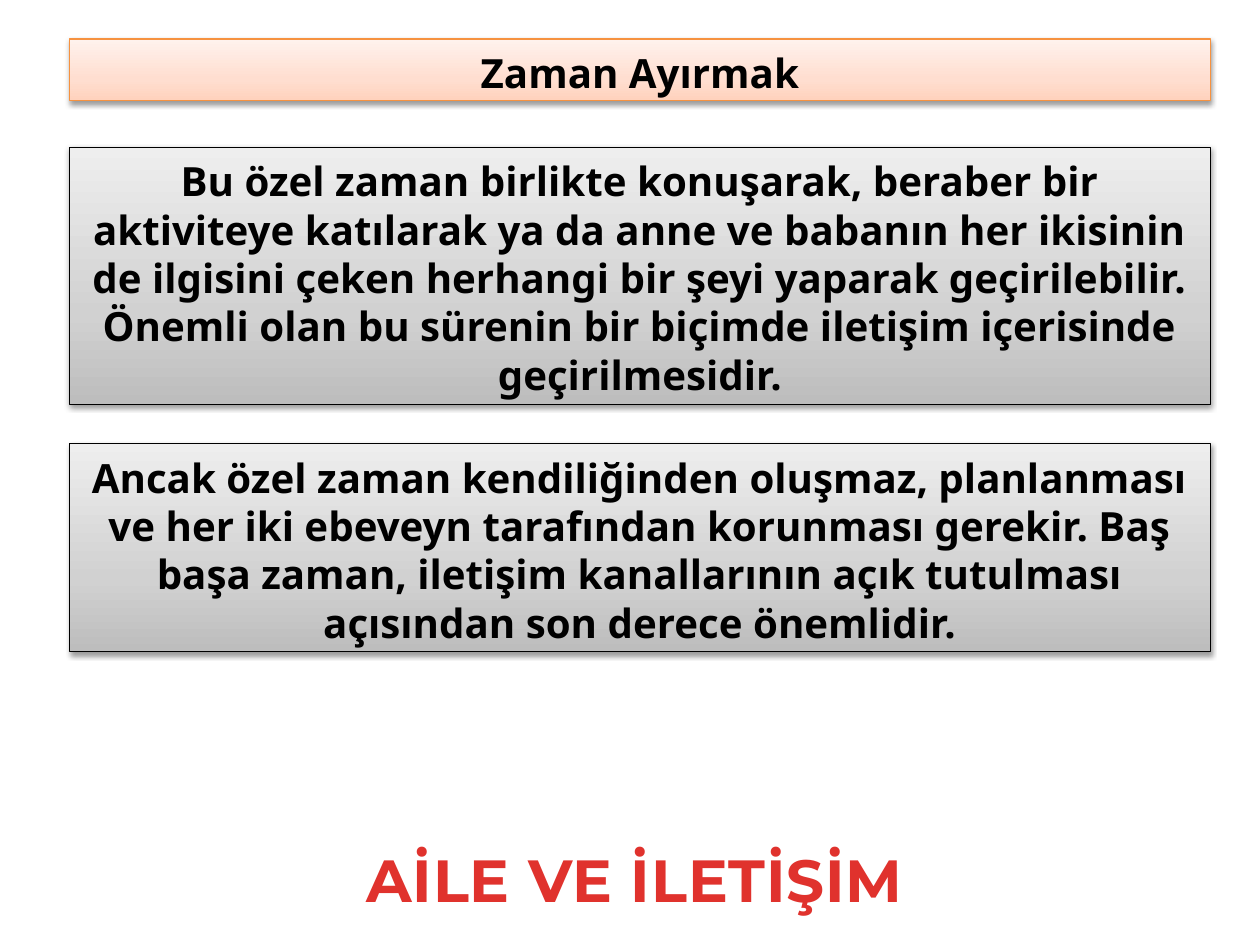
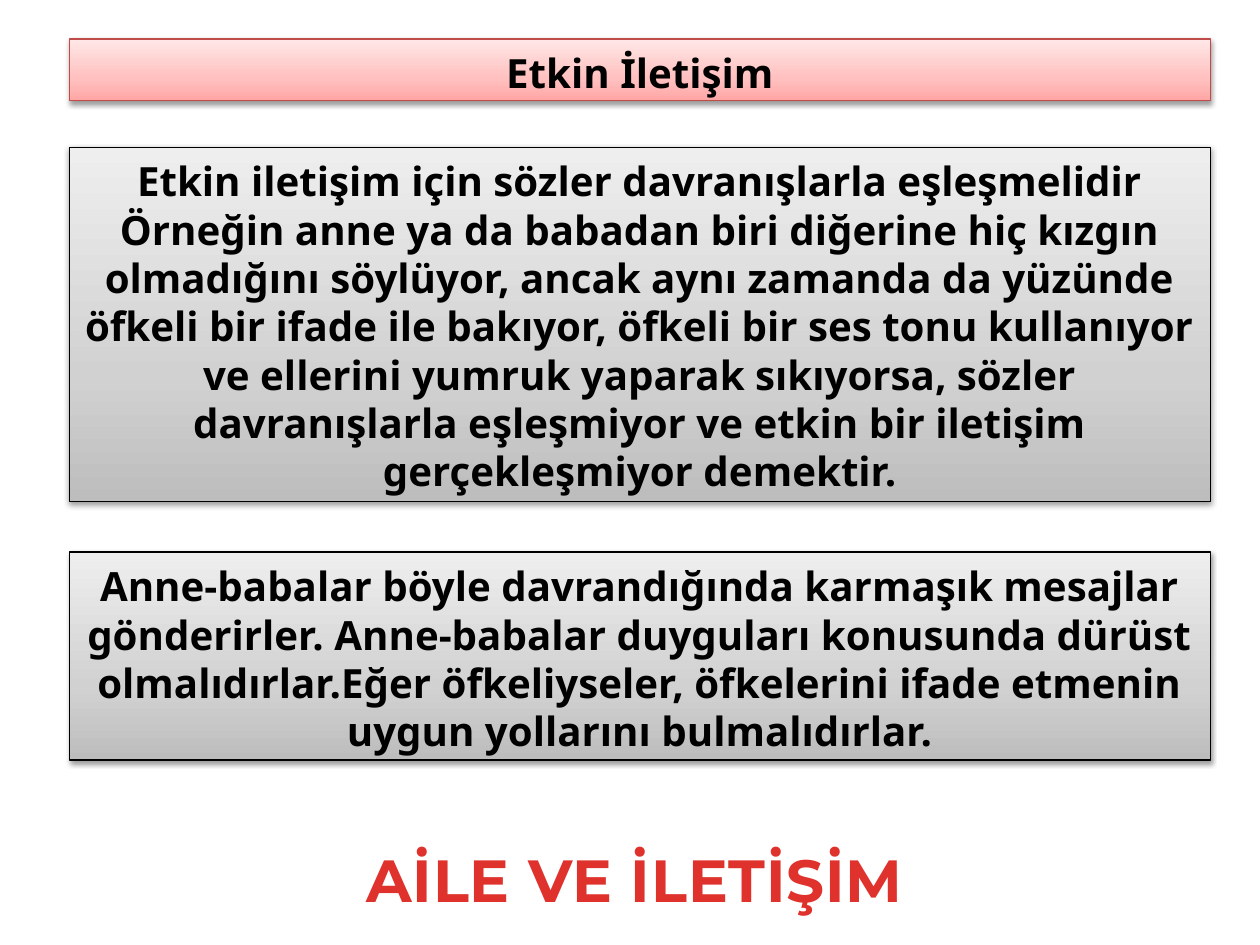
from lxml.etree import SubElement
from pptx import Presentation
from pptx.dml.color import RGBColor
from pptx.enum.shapes import MSO_SHAPE
from pptx.enum.text import MSO_ANCHOR, MSO_AUTO_SIZE, PP_ALIGN
from pptx.oxml.ns import qn
from pptx.util import Cm, Pt

BLACK, RED = "000000", "E0322D"
BODY_FONT, FOOTER_FONT = "Noto Sans", "Montserrat"
GREY = {"stops": ("BDBDBD", "D1D1D1", "EEEEEE"), "line": BLACK}
ORANGE = {"stops": ("FFD2BD", "FFDED0", "FFF2ED"), "line": "F69240"}
PINK = {"stops": ("FFA6A5", "FFC0BF", "FFE7E7"), "line": "BF4C48"}
STOP_POSITIONS = (0, 35, 100)

PANEL_LEFT, PANEL_WIDTH = 1.4, 23.01
TITLE_BOX = (PANEL_LEFT, 0.79, PANEL_WIDTH, 1.24)
FOOTER_BOX = (6.55, 16.87, 12.5, 1.7)
FIRST_PANEL_TOP = 2.97
FOOTER_TEXT = "AİLE VE İLETİŞİM"

SLIDES = [
    {
        "title": "Zaman Ayırmak",
        "theme": ORANGE,
        "gap": 0.79,
        "panels": [
            (5.18, ["Bu özel zaman birlikte konuşarak, beraber bir aktiviteye katılarak ya da "
                    "anne ve babanın her ikisinin de ilgisini çeken herhangi bir şeyi yaparak "
                    "geçirilebilir. Önemli olan bu sürenin bir biçimde iletişim içerisinde "
                    "geçirilmesidir."]),
            (4.19, ["Ancak özel zaman kendiliğinden oluşmaz, planlanması ve her iki ebeveyn "
                    "tarafından korunması gerekir. Baş başa zaman, iletişim kanallarının açık "
                    "tutulması açısından son derece önemlidir."]),
        ],
    },
    {
        "title": "Etkin İletişim",
        "theme": PINK,
        "gap": 1.02,
        "panels": [
            (7.14, ["Etkin iletişim için sözler davranışlarla eşleşmelidir",
                    "Örneğin anne ya da babadan biri diğerine hiç kızgın olmadığını söylüyor, "
                    "ancak aynı zamanda da yüzünde öfkeli bir ifade ile bakıyor, öfkeli bir ses "
                    "tonu kullanıyor ve ellerini yumruk yaparak sıkıyorsa, sözler davranışlarla "
                    "eşleşmiyor ve etkin bir iletişim gerçekleşmiyor demektir."]),
            (4.19, ["Anne-babalar böyle davrandığında karmaşık mesajlar gönderirler. "
                    "Anne-babalar duyguları konusunda dürüst olmalıdırlar.Eğer öfkeliyseler, "
                    "öfkelerini ifade etmenin uygun yollarını bulmalıdırlar."]),
        ],
    },
]


def color(value):
    """Turn a hex string into a colour."""
    return RGBColor.from_string(value)


def write_text(shape, texts, font_name, size, font_color):
    """Write centred bold paragraphs and return their runs."""
    frame = shape.text_frame
    frame.word_wrap = True
    frame.auto_size = MSO_AUTO_SIZE.SHAPE_TO_FIT_TEXT
    frame.vertical_anchor = MSO_ANCHOR.TOP
    runs = []
    for index, text in enumerate(texts):
        paragraph = frame.paragraphs[0] if index == 0 else frame.add_paragraph()
        paragraph.alignment = PP_ALIGN.CENTER
        run = paragraph.add_run()
        run.text = text
        run.font.name = font_name
        run.font.size = Pt(size)
        run.font.bold = True
        run.font.color.rgb = color(font_color)
        runs.append(run)
    return runs


def paint_gradient(shape, stops):
    """Fill a shape with a vertical gradient that is lightest at the top."""
    shape.fill.gradient()
    shape.fill.gradient_angle = 90
    stop_list = shape.element.spPr.find(qn("a:gradFill")).find(qn("a:gsLst"))
    for old_stop in list(stop_list):
        stop_list.remove(old_stop)
    for position, value in zip(STOP_POSITIONS, stops):
        stop = SubElement(stop_list, qn("a:gs"), pos=str(position * 1000))
        SubElement(stop, qn("a:srgbClr"), val=value)


def add_shadow(shape):
    """Give a shape a soft shadow straight below it."""
    shape.shadow.inherit = False
    effects = shape.element.spPr.find(qn("a:effectLst"))
    shadow = SubElement(effects, qn("a:outerShdw"), blurRad=str(Pt(3.1)), dist=str(Pt(1.6)),
                        dir="5400000", rotWithShape="0")
    shadow_color = SubElement(shadow, qn("a:srgbClr"), val=BLACK)
    SubElement(shadow_color, qn("a:alpha"), val="38000")


def add_panel(slide, box, texts, theme):
    """Add a shaded rectangle with centred text."""
    shape = slide.shapes.add_shape(MSO_SHAPE.RECTANGLE, *map(Cm, box))
    paint_gradient(shape, theme["stops"])
    shape.line.color.rgb = color(theme["line"])
    shape.line.width = Pt(0.75)
    add_shadow(shape)
    write_text(shape, texts, BODY_FONT, 23, BLACK)
    frame = shape.text_frame
    frame.margin_top, frame.margin_bottom = Cm(0.19), Cm(0.06)
    for paragraph in frame.paragraphs:
        paragraph.line_spacing = Pt(27.6)


def add_footer(slide, box):
    """Add the course name at the bottom."""
    shape = slide.shapes.add_textbox(*map(Cm, box))
    for run in write_text(shape, [FOOTER_TEXT], FOOTER_FONT, 34, RED):
        run.font._element.set("spc", "50")


def add_topic_slide(presentation, topic):
    """Add a slide with a title band, stacked panels and the footer."""
    slide = presentation.slides.add_slide(presentation.slide_layouts[6])
    add_panel(slide, TITLE_BOX, [topic["title"]], topic["theme"])
    top = FIRST_PANEL_TOP
    for height, texts in topic["panels"]:
        add_panel(slide, (PANEL_LEFT, top, PANEL_WIDTH, height), texts, GREY)
        top += height + topic["gap"]
    add_footer(slide, FOOTER_BOX)


def main():
    """Build and save the presentation."""
    presentation = Presentation()
    presentation.slide_width, presentation.slide_height = Cm(25.4), Cm(19.05)
    for topic in SLIDES:
        add_topic_slide(presentation, topic)
    presentation.save("out.pptx")


if __name__ == "__main__":
    main()
